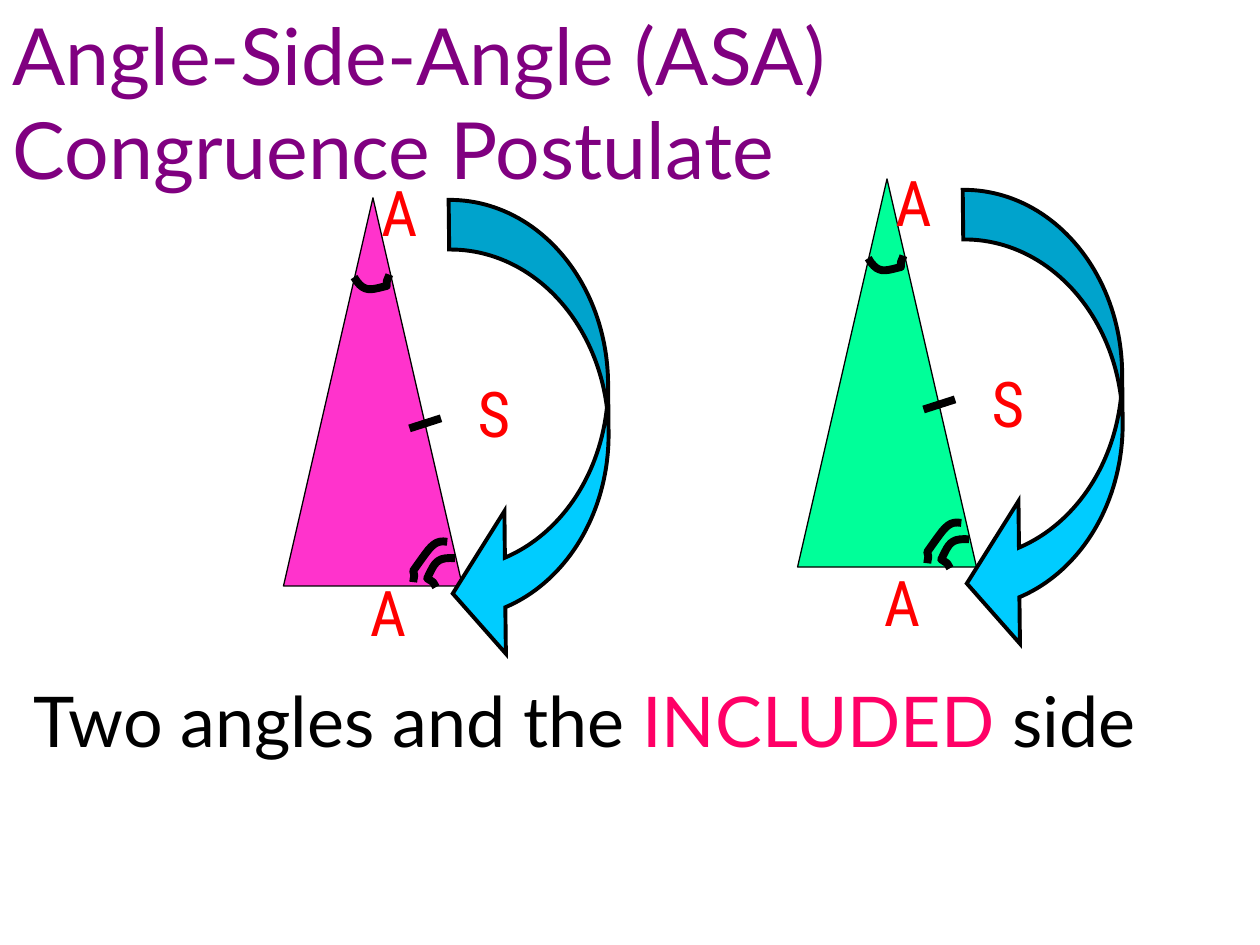
from lxml import etree
from pptx import Presentation
from pptx.dml.color import RGBColor
from pptx.enum.shapes import MSO_CONNECTOR, MSO_SHAPE
from pptx.enum.text import MSO_ANCHOR, MSO_AUTO_SIZE, PP_ALIGN
from pptx.oxml.ns import qn
from pptx.util import Inches, Pt

TRIANGLE = MSO_SHAPE.ISOSCELES_TRIANGLE
CURVED_ARROW = MSO_SHAPE.CURVED_DOWN_ARROW
STRAIGHT = MSO_CONNECTOR.STRAIGHT
LEFT, CENTER = PP_ALIGN.LEFT, PP_ALIGN.CENTER
TOP = MSO_ANCHOR.TOP
NO_FIT = MSO_AUTO_SIZE.NONE

BLACK = RGBColor(0x00, 0x00, 0x00)
PURPLE = RGBColor(0x80, 0x00, 0x80)
MAGENTA = RGBColor(0xFF, 0x33, 0xCC)
GREEN = RGBColor(0x00, 0xFF, 0x99)
CYAN = RGBColor(0x00, 0xCC, 0xFF)
RED = RGBColor(0xFF, 0x00, 0x00)
PINK = RGBColor(0xFF, 0x00, 0x66)

COLUMNS, ROWS = 100, 75
TITLE_ONLY = 5
CURVE_STEPS = 10

ANGLE_MARKS = [
    [(5.6, 6.3), (6.4, 7.6), (6.9, 7.3), (8.2, 7), (8.2, 6.4), (8.2, 6.7), (8.4, 6.1)],
    [(13, 27.3), (11.9, 27.1), (11.6, 27.8), (10.3, 29.6), (10.4, 30.1), (10.4, 29.8), (10.3, 30.5)],
    [(13.6, 28.6), (12.1, 28.5), (12, 29), (11.4, 30.2), (12, 30.6), (11.8, 30.4), (12.1, 30.9)],
]
SIDE_TICK = [(10, 18.3), (12.5, 17.5)]
LETTERS = [("A", 5.6, 0), ("A", 4.7, 31.7), ("S", 13.1, 15.9)]


def add_run(p, text, *, size, color, font="Lato"):
    """Append a formatted run to a paragraph."""
    r = p.add_run()
    r.text = text
    r.font.size, r.font.name, r.font.color.rgb = Pt(size), font, color


def bezier_points(points):
    """Return points along a chain of cubic curves."""
    result = []
    for i in range(0, len(points) - 1, 3):
        a, b, c, d = points[i:i + 4]
        for step in range(1, CURVE_STEPS + 1):
            t = step / CURVE_STEPS
            u = 1 - t
            weights = (u ** 3, 3 * u * u * t, 3 * u * t * t, t ** 3)
            result.append(tuple(sum(w * q[k] for w, q in zip(weights, (a, b, c, d)))
                                for k in (0, 1)))
    return result


class CongruenceSlide:
    """Hold the grid, the line style and the current slide."""

    def __init__(self, prs):
        """Add a title-only slide and measure its grid."""
        self.s = prs.slides.add_slide(prs.slide_layouts[TITLE_ONLY])
        self.col = prs.slide_width / COLUMNS
        self.row = prs.slide_height / ROWS

    def at(self, x, y):
        """Convert grid columns and rows to slide lengths."""
        return round(x * self.col), round(y * self.row)

    def frame(self, sp, align=LEFT, wrap=True):
        """Prepare a text frame and return its first paragraph."""
        tf = sp.text_frame
        tf.auto_size, tf.word_wrap, tf.vertical_anchor = NO_FIT, wrap, TOP
        p = tf.paragraphs[0]
        p.alignment, p.space_before = align, Pt(0)
        return p

    def title(self, text, x, y, w, h):
        """Place the slide title."""
        sp = self.s.shapes.title
        sp.left, sp.top = self.at(x, y)
        sp.width, sp.height = self.at(w, h)
        add_run(self.frame(sp), text, size=45, color=PURPLE)

    def text(self, shapes, runs, x, y, w, h, align=LEFT, wrap=True, **style):
        """Add a text box made of text and colour pairs."""
        sp = shapes.add_textbox(*self.at(x, y), *self.at(w, h))
        p = self.frame(sp, align, wrap)
        for text, color in runs:
            add_run(p, text, color=color, **style)

    def outline(self, sp, width):
        """Give a shape a black line and no shadow."""
        sp.line.color.rgb, sp.line.width = BLACK, Pt(width)
        sp.shadow.inherit = False

    def shape(self, shapes, kind, x, y, w, h, fill, width):
        """Add a filled preset shape."""
        sp = shapes.add_shape(kind, *self.at(x, y), *self.at(w, h))
        sp.fill.solid()
        sp.fill.fore_color.rgb = fill
        self.outline(sp, width)
        return sp

    def angle_mark(self, shapes, points):
        """Add an open curved mark."""
        builder = shapes.build_freeform(*self.at(*points[0]))
        builder.add_line_segments([self.at(*q) for q in bezier_points(points)], close=False)
        sp = builder.convert_to_shape()
        sp.fill.background()
        self.outline(sp, 4.5)

    def tick(self, shapes, start, end):
        """Add a straight side mark."""
        c = shapes.add_connector(STRAIGHT, *self.at(*start), *self.at(*end))
        c.line.color.rgb, c.line.width = BLACK, Pt(4.5)
        etree.SubElement(c._element.spPr, qn("a:effectLst"))

    def triangle(self, x, y, fill):
        """Add a triangle with its angle and side marks."""
        shapes = self.s.shapes.add_group_shape().shapes
        self.shape(shapes, TRIANGLE, x, y, 14.2, 30.8, fill, 0.75)
        for mark in ANGLE_MARKS:
            self.angle_mark(shapes, [(x + dx, y + dy) for dx, dy in mark])
        self.tick(shapes, *[(x + dx, y + dy) for dx, dy in SIDE_TICK])

    def sequence(self, x, y):
        """Add a curved arrow with the letters A, S and A."""
        shapes = self.s.shapes.add_group_shape().shapes
        sp = self.shape(shapes, CURVED_ARROW, x, y + 14.7, 36.9, 12.5, CYAN, 2.25)
        sp.rotation = 89.4
        for i, value in enumerate((0.315, 0.905, 0.333)):
            sp.adjustments[i] = value
        etree.SubElement(sp.line._get_or_add_ln(), qn("a:miter"), lim="800000")
        for letter, dx, dy in LETTERS:
            self.text(shapes, [(letter, RED)], x + dx, y + dy, 5, 7.5, CENTER, False,
                      size=36, font="Roboto Condensed")


def main():
    """Build and save the slide."""
    prs = Presentation()
    prs.slide_width, prs.slide_height = Inches(10), Inches(7.5)
    slide = CongruenceSlide(prs)
    slide.title("Angle-Side-Angle (ASA) Congruence Postulate", 0, 0, 100, 16)
    for x, y, fill in ((22.5, 15.7, MAGENTA), (63.3, 14.2, GREEN)):
        slide.triangle(x, y, fill)
    caption = [("Two angles and the ", BLACK), ("INCLUDED", PINK), (" side", BLACK)]
    slide.text(slide.s.shapes, caption, 1.7, 53.3, 98.3, 7.7, size=40)
    for x, y in ((23.6, 13.3), (64.4, 12.5)):
        slide.sequence(x, y)
    prs.save("out.pptx")


if __name__ == "__main__":
    main()
